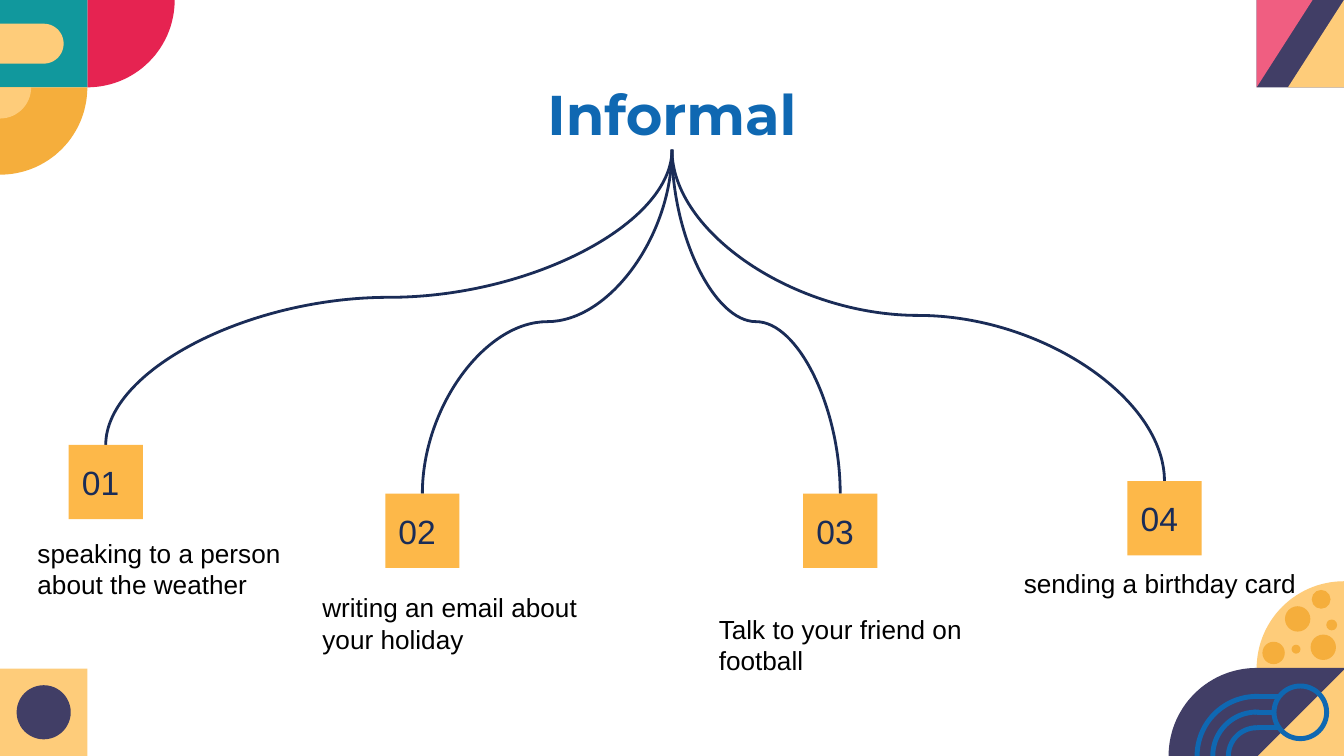
from math import cos, radians, sin

from lxml.etree import SubElement
from pptx import Presentation
from pptx.dml.color import RGBColor
from pptx.enum.shapes import MSO_CONNECTOR as Link, MSO_SHAPE as Preset
from pptx.enum.text import MSO_ANCHOR as Anchor, MSO_AUTO_SIZE as AutoSize, PP_ALIGN as Align
from pptx.oxml.ns import qn
from pptx.util import Pt

# Content: number, square position, caption, caption box
TITLE = "Informal"
BRANCHES = [
    ("01", (36.8, 238.4), "speaking to a person about the weather", (13, 284.4, 175, 41)),
    ("02", (206.4, 264.5), "writing an email about your holiday", (165.6, 313.4, 157, 41)),
    ("03", (430.3, 264.5), "Talk to your friend on football", (378, 325, 152, 41)),
    ("04", (604, 257.8), "sending a birthday card", (541.4, 300.6, 208, 24.5)),
]
CRATERS = [  # centre x, centre y, diameter
    (708.9, 346.8, 13.6), (695.2, 331.6, 13.6), (713.4, 334.8, 5.8),
    (707.8, 321.1, 10.1), (694.3, 347.8, 4.8), (682.3, 349.8, 12),
]
RAINBOW = [(31.9, 685.4), (23.5, 682.5), (15.1, 685.4)]  # radius, end of line

# Measures and colours
WIDTH, HEIGHT, TILE, SQUARE = 720, 405, 46.8, 39.7
RIGHT, BOTTOM = WIDTH - TILE, HEIGHT - TILE
ROOT = (360, 80.2)
INK, BLUE, AMBER = "1A2C57", "0F68B2", "FDB849"
NAVY, CREAM, ORANGE = "413E66", "FECC7A", "F5AE3C"
TEAL, CRIMSON, PINK = "11989D", "E62351", "F05E81"

deck = Presentation()
deck.slide_width, deck.slide_height = Pt(WIDTH), Pt(HEIGHT)
page = deck.slides.add_slide(deck.slide_layouts[5])


def rgb(code):
    return RGBColor.from_string(code)


def paint(shape, fill=None, line=None, weight=0.75):
    shape.shadow.inherit = False
    if fill:
        shape.fill.solid()
        shape.fill.fore_color.rgb = rgb(fill)
    else:
        shape.fill.background()
    if line:
        shape.line.color.rgb = rgb(line)
        shape.line.width = Pt(weight)
    else:
        shape.line.fill.background()
    return shape


def preset(kind, left, top, width, height, **style):
    box = page.shapes.add_shape(kind, Pt(left), Pt(top), Pt(width), Pt(height))
    return paint(box, **style)


def circle(x, y, size, **style):
    return preset(Preset.OVAL, x - size / 2, y - size / 2, size, size, **style)


def tile(left, top, fill):
    return preset(Preset.RECTANGLE, left, top, TILE, TILE, fill=fill)


def outline(points, close=True, **style):
    corners = [(Pt(x), Pt(y)) for x, y in points]
    builder = page.shapes.build_freeform(*corners[0])
    builder.add_line_segments(corners[1:], close=close)
    return paint(builder.convert_to_shape(), **style)


def arc(x, y, radius, start, sweep=90):
    angles = [radians(start + sweep * step / 30) for step in range(31)]
    return [(x + radius * cos(a), y + radius * sin(a)) for a in angles]


def quarter(x, y, radius, start, **style):
    return outline([(x, y)] + arc(x, y, radius, start), **style)


def connect(kind, begin, end, color, weight):
    line = page.shapes.add_connector(kind, *map(Pt, begin + end))
    line.line.color.rgb = rgb(color)
    line.line.width = Pt(weight)
    SubElement(line.element.spPr, qn("a:effectLst"))
    return line


def branch(begin, end):
    """Curve leaving begin downwards: a sideways connector turned upright."""
    run, drop = end[0] - begin[0], end[1] - begin[1]
    middle_x, middle_y = begin[0] + run / 2, begin[1] + drop / 2
    left, right = middle_x - drop / 2, middle_x + drop / 2
    top, bottom = middle_y - abs(run) / 2, middle_y + abs(run) / 2
    if run > 0:
        left, right = right, left
    curve = connect(Link.CURVE, (left, top), (right, bottom), INK, 1.5)
    turn = 270 if run > 0 else 90
    curve.element.spPr.find(qn("a:xfrm")).set("rot", str(turn * 60000))


def write(box, text, size, color, font="Arial", bold=False, align=Align.LEFT,
          anchor=Anchor.TOP, inset=3.6):
    frame = box.text_frame
    frame.text = text
    frame.word_wrap = True
    frame.auto_size = AutoSize.NONE
    frame.vertical_anchor = anchor
    frame.margin_left = frame.margin_right = Pt(7.2)
    frame.margin_top = frame.margin_bottom = Pt(inset)
    para = frame.paragraphs[0]
    para.alignment = align
    span = para.runs[0].font
    span.name, span.size, span.bold = font, Pt(size), bold
    span.color.rgb = rgb(color)


# Top left corner
quarter(TILE, 0, TILE, 0, fill=CRIMSON)
tile(0, 0, TEAL)
outline([(0, 12.7)] + arc(23.4, 23.4, 10.7, -90, 180) + [(0, 34.1)], fill=CREAM)
quarter(0, TILE, TILE, 0, fill=ORANGE)
quarter(0, TILE, 16.7, 0, fill=CREAM)

# Top right corner
tile(RIGHT, 0, NAVY)
outline([(WIDTH, 0), (WIDTH, TILE), (690, TILE)], fill=CREAM)
outline([(RIGHT, 0), (703.2, 0), (RIGHT, TILE)], fill=PINK)

# Bottom left corner
tile(0, BOTTOM, CREAM)
circle(23.4, 381.6, 29, fill=NAVY)

# Bottom right corner: moon, then rainbow and ring
quarter(WIDTH, BOTTOM, TILE, 180, fill=CREAM)
for crater in CRATERS:
    circle(*crater, fill=ORANGE)
quarter(RIGHT, HEIGHT, TILE, 180, fill=NAVY, line=NAVY)
for radius, _ in RAINBOW:
    outline(arc(RIGHT, HEIGHT, radius, 180), close=False, line=BLUE, weight=2.64)
tile(RIGHT, BOTTOM, CREAM)
outline([(WIDTH, BOTTOM), (RIGHT, HEIGHT), (RIGHT, BOTTOM)], fill=NAVY, line=NAVY)
circle(696.6, 381.6, 28.2, line=BLUE, weight=2.64)
for radius, end in RAINBOW:
    y = HEIGHT - radius
    connect(Link.STRAIGHT, (RIGHT, y), (end, y), BLUE, 2.64)
    preset(Preset.RECTANGLE, RIGHT - 1.2, y - 1.32, 2.4, 2.64, fill=BLUE)

# Title
title = page.shapes.title
title.left, title.top, title.width, title.height = map(Pt, (56.7, 35.3, 606.6, 45))
write(title, TITLE, 30, BLUE, "Montserrat", True, Align.CENTER, inset=7.2)

# Branches, numbered squares and captions
for number, (left, top), caption, place in BRANCHES:
    branch(ROOT, (left + SQUARE / 2, top))
    square = preset(Preset.RECTANGLE, left, top, SQUARE, SQUARE, fill=AMBER)
    write(square, number, 18, INK, anchor=Anchor.MIDDLE, inset=7.2)
    write(page.shapes.add_textbox(*map(Pt, place)), caption, 14, "000000")

deck.save("out.pptx")
